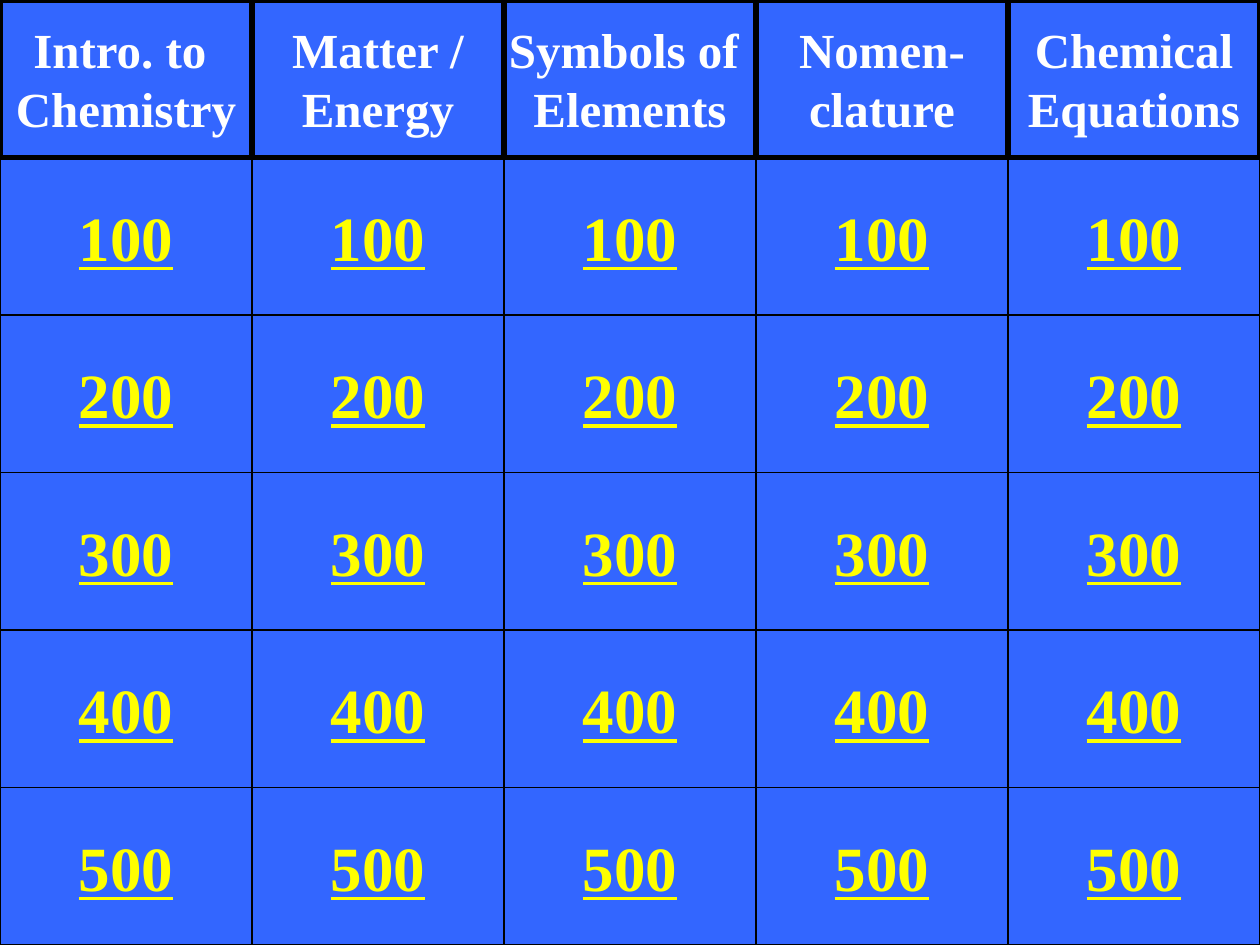
"""Build a chemistry quiz board with five topics and five point values each."""
from pptx import Presentation
from pptx.dml.color import RGBColor
from pptx.enum.shapes import MSO_SHAPE
from pptx.enum.text import MSO_ANCHOR, PP_ALIGN
from pptx.util import Inches, Pt

COLORS = {"board": "3366FF", "border": "000000", "topic": "FFFFFF", "points": "FFFF00"}
TOPICS = [
    ["Intro. to ", "Chemistry"],
    ["Matter /", "Energy"],
    ["Symbols of ", "Elements"],
    ["Nomen-", "clature"],
    ["Chemical", "Equations"],
]
POINTS = [100, 200, 300, 400, 500]
CELL_WIDTH, CELL_HEIGHT = 2, 1.25
TOPIC_FONT = {"name": "Times New Roman", "size": Pt(28), "bold": True}
POINTS_FONT = {"name": "Times New Roman", "size": Pt(36), "bold": True, "underline": True}


def add_cell(slide, kind, column, row, lines, border, font_values, color):
    shape = slide.shapes.add_shape(
        kind,
        Inches(column * CELL_WIDTH),
        Inches(row * CELL_HEIGHT),
        Inches(CELL_WIDTH),
        Inches(CELL_HEIGHT),
    )
    shape.shadow.inherit = False
    shape.fill.solid()
    shape.fill.fore_color.rgb = RGBColor.from_string(COLORS["board"])
    shape.line.color.rgb = RGBColor.from_string(COLORS["border"])
    shape.line.width = Pt(border)
    text_frame = shape.text_frame
    text_frame.word_wrap = False
    text_frame.vertical_anchor = MSO_ANCHOR.MIDDLE
    text_frame.text = "\n".join(lines)
    for paragraph in text_frame.paragraphs:
        paragraph.alignment = PP_ALIGN.CENTER
        font = paragraph.runs[0].font
        font.color.rgb = RGBColor.from_string(COLORS[color])
        for attribute, value in font_values.items():
            setattr(font, attribute, value)


presentation = Presentation()
presentation.slide_width = Inches(10)
presentation.slide_height = Inches(7.5)
slide = presentation.slides.add_slide(presentation.slide_layouts[6])
slide.background.fill.solid()
slide.background.fill.fore_color.rgb = RGBColor.from_string(COLORS["board"])

for column in range(len(TOPICS)):
    for row, points in enumerate(POINTS, start=1):
        add_cell(slide, MSO_SHAPE.ACTION_BUTTON_CUSTOM, column, row,
                 [str(points)], 0.75, POINTS_FONT, "points")

for column, topic in enumerate(TOPICS):
    add_cell(slide, MSO_SHAPE.RECTANGLE, column, 0, topic, 3, TOPIC_FONT, "topic")

presentation.save("out.pptx")
